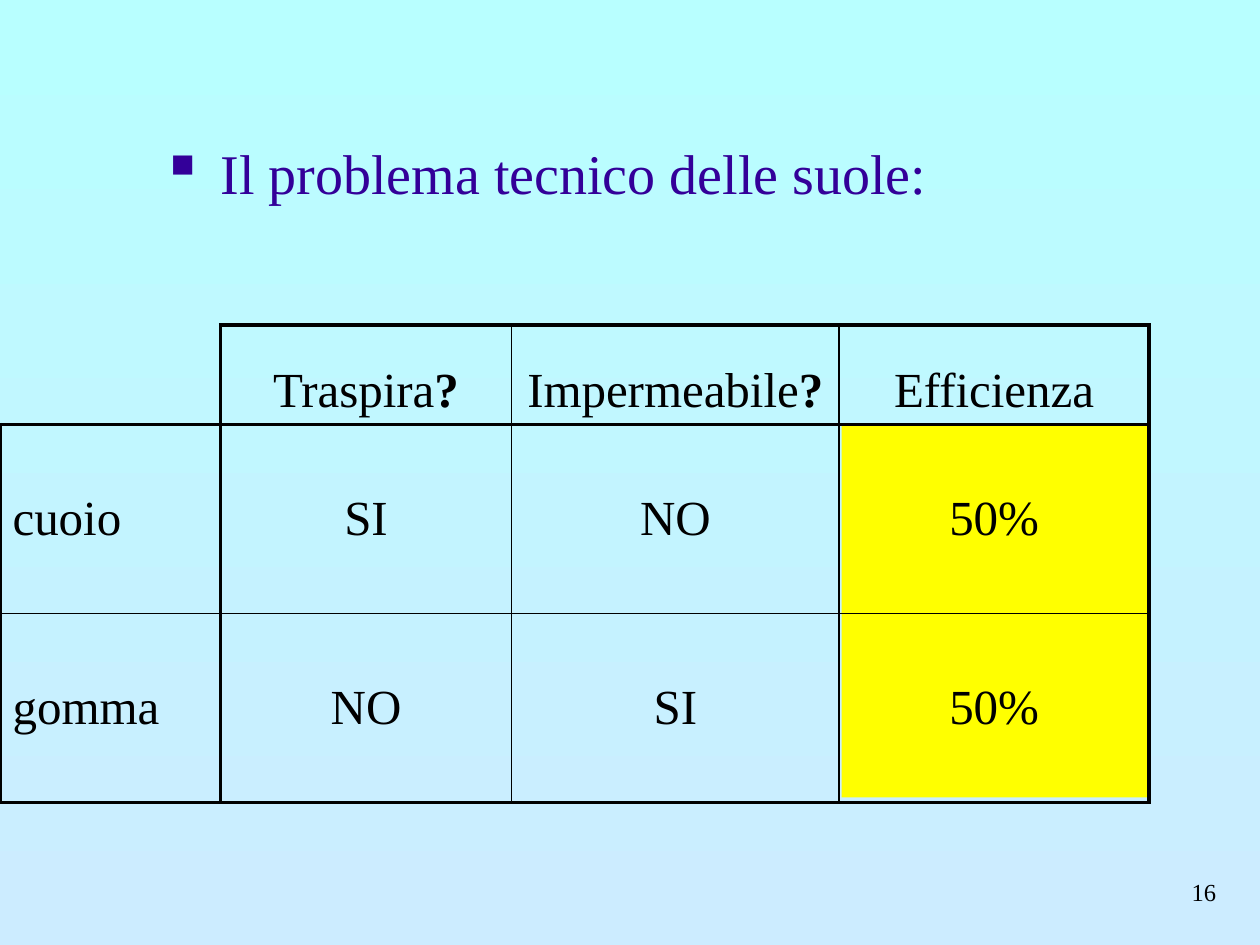
from pptx import Presentation
from pptx.dml.color import RGBColor
from pptx.enum.shapes import MSO_SHAPE
from pptx.enum.text import MSO_ANCHOR as ANCHOR, PP_ALIGN as ALIGN
from pptx.oxml.ns import qn
from pptx.util import Inches, Pt
from lxml.etree import SubElement

BLACK, VIOLET, YELLOW = "000000", "330099", "FFFF00"
THICK, THIN = 2.25, 1
NO_STYLE = "{2D5ABB26-0587-4C30-8999-92F81FD0307C}"


def rgb(value):
    return RGBColor.from_string(value)


class SlideBuilder:
    font = "Times New Roman"

    def __init__(self, prs):
        self.s = prs.slides.add_slide(prs.slide_layouts[6])

    def background(self, *colors):
        fill = self.s.background.fill
        fill.gradient()
        fill.gradient_angle = 270
        for position, (stop, color) in enumerate(zip(fill.gradient_stops, colors)):
            stop.position = position
            stop.color.rgb = rgb(color)

    def rect(self, box, color):
        sp = self.s.shapes.add_shape(MSO_SHAPE.RECTANGLE, *map(Inches, box))
        sp.shadow.inherit = False
        sp.fill.solid()
        sp.fill.fore_color.rgb = rgb(color)
        sp.line.fill.background()

    def runs(self, p, parts, color):
        for text, size, bold in parts:
            r = p.add_run()
            r.text = text
            for name, value in {"size": Pt(size), "bold": bold, "name": self.font}.items():
                setattr(r.font, name, value)
            r.font.color.rgb = rgb(color)

    def text(self, box, parts, color, align=ALIGN.LEFT, bullet=None):
        tf = self.s.shapes.add_textbox(*map(Inches, box)).text_frame
        for name, value in {"word_wrap": True, "vertical_anchor": ANCHOR.MIDDLE}.items():
            setattr(tf, name, value)
        p = tf.paragraphs[0]
        p.alignment = align
        if bullet:
            pPr = p._p.get_or_add_pPr()
            pPr.set("marL", str(Inches(0.25)))
            pPr.set("indent", str(-Inches(0.25)))
            SubElement(pPr, qn("a:buFont"), typeface=self.font)
            SubElement(pPr, qn("a:buChar"), char=bullet)
        self.runs(p, parts, color)

    def borders(self, cell, widths):
        tcPr = cell._tc.get_or_add_tcPr()
        for side, width in widths.items():
            ln = SubElement(tcPr, qn(f"a:ln{side}"), w=str(Pt(width)))
            fill = SubElement(ln, qn("a:solidFill"))
            SubElement(fill, qn("a:srgbClr"), val=BLACK)

    def table(self, left, top, widths, heights, rows, size):
        box = map(Inches, (left, top, sum(widths), sum(heights)))
        table = self.s.shapes.add_table(len(rows), len(widths), *box).table
        table.first_row = table.horz_banding = False
        table._tbl.tblPr.find(qn("a:tableStyleId")).text = NO_STYLE
        for column, width in zip(table.columns, widths):
            column.width = Inches(width)
        for row, height in zip(table.rows, heights):
            row.height = Inches(height)
        last_col = len(widths) - 1
        for i, texts in enumerate(rows):
            for j, text in enumerate(texts):
                cell = table.cell(i, j)
                sides = {
                    "L": THICK if j < 2 else THIN,
                    "R": THICK if j in (0, last_col) else THIN,
                    "T": THICK if i < 2 else THIN,
                    "B": THIN if i == 1 else THICK,
                }
                if i == j == 0:
                    sides = {side: sides[side] for side in "RB"}
                self.borders(cell, sides)
                cell.fill.background()
                cell.vertical_anchor = ANCHOR.MIDDLE if i else ANCHOR.BOTTOM
                p = cell.text_frame.paragraphs[0]
                p.alignment = ALIGN.CENTER if j else ALIGN.LEFT
                p.space_before = Pt(0.2 * size)
                word, mark, _ = text.partition("?")
                parts = [(word, size, False), (mark, size, True)]
                self.runs(p, [part for part in parts if part[0]], BLACK)


def main():
    prs = Presentation()
    prs.slide_width, prs.slide_height = Inches(10), Inches(7.5)
    slide = SlideBuilder(prs)
    slide.background("B8FFFF", "CCECFF")
    for top, height in ((3.38, 1.49), (4.86, 1.47)):
        slide.rect((6.68, top, 2.44, height), YELLOW)
    title = [(" ", 44, False), ("Il problema tecnico delle suole:", 32, False)]
    slide.text((1.25, 0.67, 8.5, 1.25), title, VIOLET, bullet="▪")
    slide.text((7.67, 6.83, 2.08, 0.5), [("16", 14, False)], BLACK, ALIGN.RIGHT)
    rows = [
        ("", "Traspira?", "Impermeabile?", "Efficienza"),
        ("cuoio", "SI", "NO", "50%"),
        ("gomma", "NO", "SI", "50%"),
    ]
    slide.table(0, 2.58, (1.75, 2.31, 2.6, 2.46), (0.79, 1.5, 1.5), rows, 28)
    prs.save("out.pptx")


if __name__ == "__main__":
    main()
